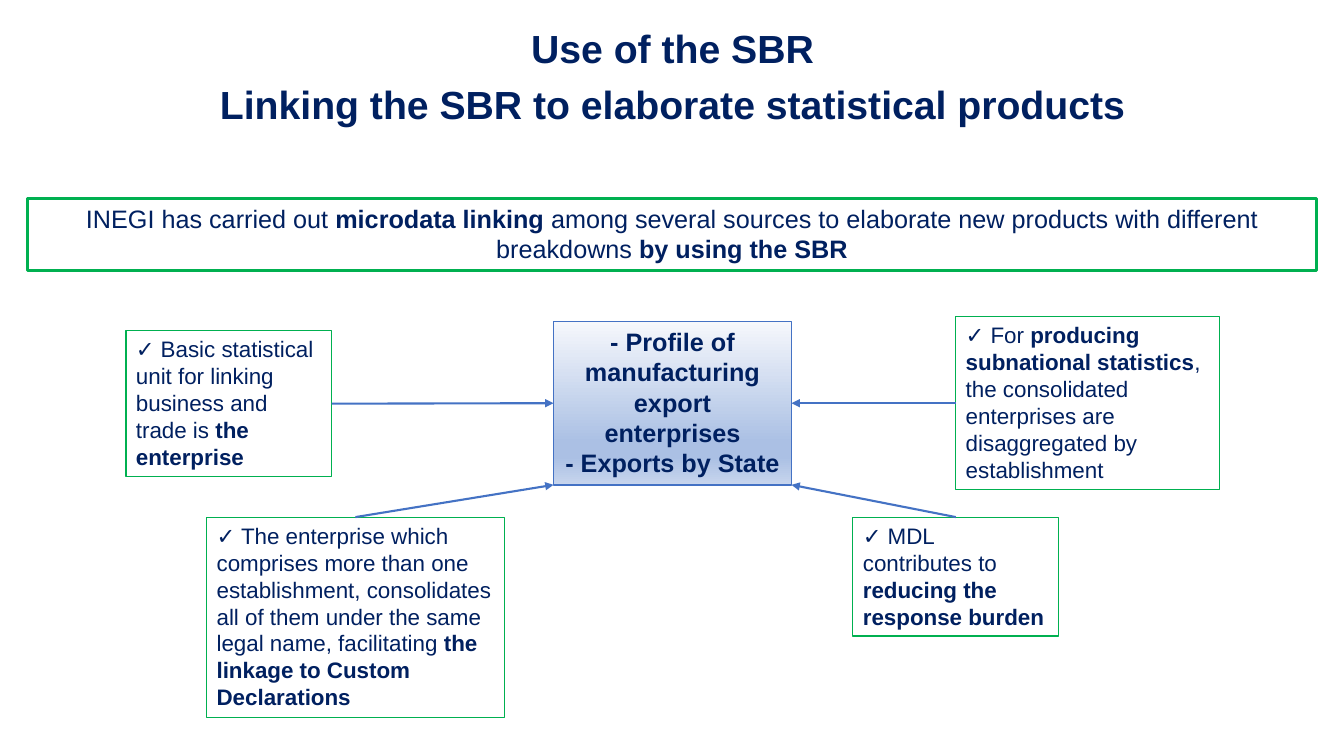
from dataclasses import dataclass

from lxml import etree
from pptx import Presentation
from pptx.dml.color import RGBColor
from pptx.enum.shapes import MSO_CONNECTOR, MSO_SHAPE
from pptx.enum.text import MSO_ANCHOR, MSO_AUTO_SIZE, PP_ALIGN
from pptx.oxml.ns import qn
from pptx.util import Inches, Pt

RECT = MSO_SHAPE.RECTANGLE
STRAIGHT = MSO_CONNECTOR.STRAIGHT
TOP = MSO_ANCHOR.TOP
FIT_SHAPE, NO_FIT = MSO_AUTO_SIZE.SHAPE_TO_FIT_TEXT, MSO_AUTO_SIZE.NONE
LEFT, CENTER = PP_ALIGN.LEFT, PP_ALIGN.CENTER
SITE_TOP, SITE_LEFT, SITE_RIGHT = 0, 1, 3
TITLE_ONLY = 5


@dataclass(frozen=True)
class Theme:
    font: str = "Arial"
    navy: str = "002060"
    green: str = "00B050"
    blue: str = "4472C4"
    shades: tuple = ((0, "F6F8FC"), (74, "ABC0E4"), (83, "ABC0E4"), (100, "C7D5ED"))
    title_size: int = 28
    lead_size: int = 18
    note_size: int = 16


THEME = Theme()

TITLE = ["Use of the SBR", "Linking the SBR to elaborate statistical products"]
BANNER = [("INEGI has carried out ", False), ("microdata linking", True),
          (" among several sources to elaborate new products with different breakdowns ", False),
          ("by using the SBR", True)]
PRODUCTS = [[("- Profile of manufacturing export enterprises", True)],
            [("- Exports by State", True)]]
UNIT = [("✓ Basic statistical unit for linking business and trade is ", False),
        ("the enterprise", True)]
CUSTOMS = [("✓ The enterprise which comprises more than one establishment, consolidates "
            "all of them under the same legal name, facilitating ", False),
           ("the linkage to Custom Declarations", True)]
SUBNATIONAL = [("✓ For ", False), ("producing subnational statistics", True),
               (", the consolidated enterprises are disaggregated by establishment", False)]
BURDEN = [("✓ MDL contributes to ", False), ("reducing the response burden", True)]


def add_runs(p, runs, size):
    for text, bold in runs:
        r = p.add_run()
        r.text = text
        r.font.name = THEME.font
        r.font.size = Pt(size)
        r.font.bold = bold
        r.font.color.rgb = RGBColor.from_string(THEME.navy)


def add_title(slide, box):
    """Place two centred lines, the second centred slightly further left."""
    shift = Inches(0.33)
    sp = slide.shapes.title
    sp.left, sp.top, sp.width, sp.height = map(Inches, box)
    tf = sp.text_frame
    tf.word_wrap, tf.auto_size, tf.vertical_anchor = True, NO_FIT, TOP
    tf.margin_right = Inches(0.1) + shift
    for i, line in enumerate(TITLE):
        p = tf.add_paragraph() if i else tf.paragraphs[0]
        p.alignment, p.line_spacing = CENTER, 0.9
        p.space_before = Pt(10 if i else 0)
        add_runs(p, [(line, True)], THEME.title_size)
    tf.paragraphs[0]._p.get_or_add_pPr().set("marL", str(shift))


def add_box(slide, box, paragraphs, size, line, weight, align=LEFT):
    sp = slide.shapes.add_shape(RECT, *map(Inches, box))
    sp.shadow.inherit = False
    sp.fill.background()
    sp.line.color.rgb = RGBColor.from_string(line)
    sp.line.width = Pt(weight)
    tf = sp.text_frame
    tf.word_wrap, tf.auto_size, tf.vertical_anchor = True, FIT_SHAPE, TOP
    for i, runs in enumerate(paragraphs):
        p = tf.add_paragraph() if i else tf.paragraphs[0]
        p.alignment = align
        add_runs(p, runs, size)
    return sp


def add_note(slide, box, runs):
    return add_box(slide, box, [runs], THEME.note_size, THEME.green, 0.75)


def shade(sp):
    """Fill the shape with the theme's gradient, running downwards."""
    sp.fill.gradient()
    sp.fill.gradient_angle = 270
    stops = sp._element.spPr.find(qn("a:gradFill")).find(qn("a:gsLst"))
    for stop in list(stops):
        stops.remove(stop)
    for percent, color in THEME.shades:
        stop = etree.SubElement(stops, qn("a:gs"), pos=str(percent * 1000))
        etree.SubElement(stop, qn("a:srgbClr"), val=color)


def add_arrow(slide, source, source_site, target, end, target_site=None):
    """Join source to target's side, or to the free point end if no site is given."""
    arrow = slide.shapes.add_connector(STRAIGHT, source.left, source.top, *end)
    arrow.begin_connect(source, source_site)
    if target_site is not None:
        arrow.end_connect(target, target_site)
    arrow.line.color.rgb = RGBColor.from_string(THEME.blue)
    arrow.line.width = Pt(1.5)
    etree.SubElement(arrow.line._get_or_add_ln(), qn("a:tailEnd"), type="triangle")
    etree.SubElement(arrow._element.spPr, qn("a:effectLst"))


def add_diagram(slide, box):
    """Place the central products in the box, with four notes pointing at them."""
    x, y, w, h = box
    right, low = x + w, y + h + 0.32
    products = add_box(slide, box, PRODUCTS, THEME.lead_size, THEME.blue, 1, CENTER)
    shade(products)
    unit = add_note(slide, (x - 4.24, y + 0.09, 2.04, 1.45), UNIT)
    customs = add_note(slide, (x - 3.44, low, 2.95, 1.99), CUSTOMS)
    subnational = add_note(slide, (right + 1.63, y - 0.05, 2.62, 1.72), SUBNATIONAL)
    burden = add_note(slide, (right + 0.61, low, 2.04, 1.18), BURDEN)

    bottom = products.top + products.height
    left_corner = (products.left, bottom)
    right_corner = (products.left + products.width, bottom)
    add_arrow(slide, unit, SITE_RIGHT, products, left_corner, SITE_LEFT)
    add_arrow(slide, customs, SITE_TOP, products, left_corner)
    add_arrow(slide, burden, SITE_TOP, products, right_corner)
    add_arrow(slide, subnational, SITE_LEFT, products, right_corner, SITE_RIGHT)


def main():
    prs = Presentation()
    prs.slide_width, prs.slide_height = Inches(13.33), Inches(7.5)
    slide = prs.slides.add_slide(prs.slide_layouts[TITLE_ONLY])
    add_title(slide, (0.64, 0.24, 12.06, 1.01))
    add_box(slide, (0.27, 1.97, 12.79, 0.71), [BANNER],
            THEME.lead_size, THEME.green, 2, CENTER)
    add_diagram(slide, (5.49, 3.19, 2.36, 1.62))
    prs.save("out.pptx")


if __name__ == "__main__":
    main()
